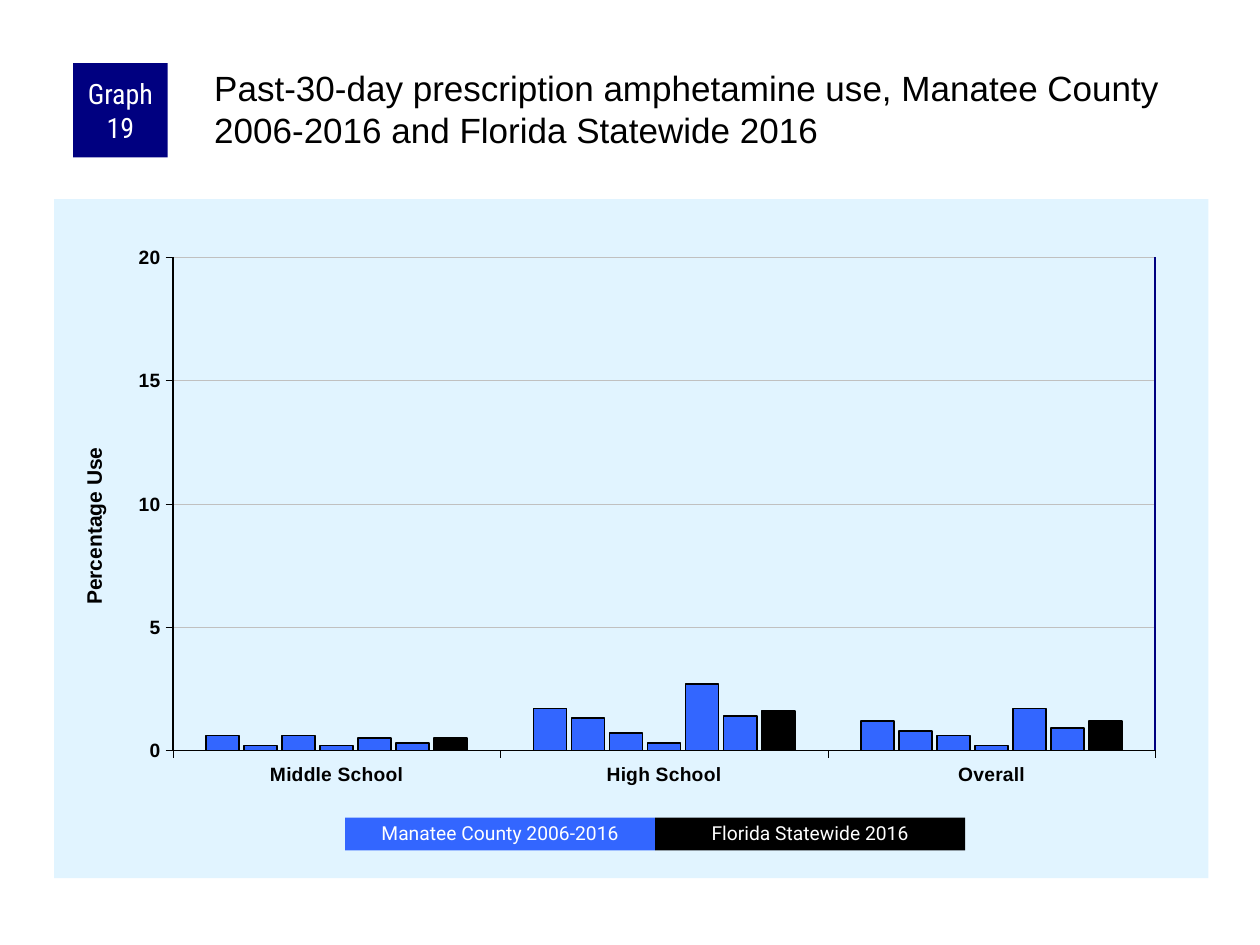
from lxml.etree import SubElement
from pptx import Presentation
from pptx.chart.data import CategoryChartData
from pptx.dml.color import RGBColor
from pptx.enum.chart import XL_CHART_TYPE, XL_TICK_MARK
from pptx.enum.shapes import MSO_CONNECTOR, MSO_SHAPE
from pptx.enum.text import MSO_ANCHOR, PP_ALIGN
from pptx.oxml import parse_xml
from pptx.oxml.ns import nsdecls, qn
from pptx.util import Inches, Pt

BLACK = RGBColor(0x00, 0x00, 0x00)
WHITE = RGBColor(0xFF, 0xFF, 0xFF)
NAVY = RGBColor(0x00, 0x00, 0x80)
BLUE = RGBColor(0x33, 0x66, 0xFF)
PALE = RGBColor(0xE1, 0xF4, 0xFF)
GRAY = RGBColor(0xC0, 0xC0, 0xC0)

TITLE = "Past-30-day prescription amphetamine use, Manatee County 2006-2016 and Florida Statewide 2016"
CATEGORIES = ["Middle School", "High School", "Overall"]
SERIES = [
    ((0.6, 1.7, 1.2), BLUE),
    ((0.2, 1.3, 0.8), BLUE),
    ((0.6, 0.7, 0.6), BLUE),
    ((0.2, 0.3, 0.2), BLUE),
    ((0.5, 2.7, 1.7), BLUE),
    ((0.3, 1.4, 0.9), BLUE),
    ((0.5, 1.6, 1.2), BLACK),
]
LEGEND = [("Manatee County 2006-2016", BLUE), ("Florida Statewide 2016", BLACK)]
LEGEND_LEFT, LEGEND_TOP, LEGEND_W, LEGEND_H = 2.74, 6.49, 2.46, 0.26
CHART_X, CHART_Y, CHART_W, CHART_H = 0.43, 1.58, 9.16, 5.39
PLOT = {"x": 0.103, "y": 0.086, "w": 0.851, "h": 0.726}


def set_font(font, name, size, color, bold=False):
    font.name, font.size, font.bold = name, Pt(size), bold
    font.color.rgb = color


def set_layout(parent, index, sizes, inner=False):
    for old in parent.findall(qn("c:layout")):
        parent.remove(old)
    layout = parse_xml(f"<c:layout {nsdecls('c')}/>")
    manual = SubElement(layout, qn("c:manualLayout"))
    if inner:
        SubElement(manual, qn("c:layoutTarget")).set("val", "inner")
    for key in "xy":
        SubElement(manual, qn(f"c:{key}Mode")).set("val", "edge")
    for key, value in sizes.items():
        SubElement(manual, qn(f"c:{key}")).set("val", str(value))
    parent.insert(index, layout)


def area_format(content):
    return parse_xml(f"<c:spPr {nsdecls('c', 'a')}>{content}</c:spPr>")


def solid(color):
    return f'<a:solidFill><a:srgbClr val="{color}"/></a:solidFill>'


def add_chart(s):
    data = CategoryChartData()
    data.categories = CATEGORIES
    for number, (values, _) in enumerate(SERIES, 1):
        data.add_series(f"Series {number}", values)
    chart = s.shapes.add_chart(
        XL_CHART_TYPE.COLUMN_CLUSTERED, Inches(CHART_X), Inches(CHART_Y),
        Inches(CHART_W), Inches(CHART_H), data).chart
    chart.has_legend = chart.has_title = False
    set_font(chart.font, "Arial", 8, BLACK)

    plot = chart.plots[0]
    plot.gap_width, plot.overlap, plot.vary_by_categories = 200, -15, False
    for series, (_, color) in zip(plot.series, SERIES):
        series.invert_if_negative = False
        series.format.fill.solid()
        series.format.fill.fore_color.rgb = color
        series.format.line.color.rgb = BLACK
        series.format.line.width = Pt(1)

    value_axis = chart.value_axis
    for axis in (chart.category_axis, value_axis):
        axis.major_tick_mark = XL_TICK_MARK.OUTSIDE
        axis.minor_tick_mark = XL_TICK_MARK.NONE
        axis.format.line.color.rgb = BLACK
        axis.format.line.width = Pt(0.25)
        set_font(axis.tick_labels.font, "Arial", 11, BLACK, True)
    value_axis.minimum_scale, value_axis.maximum_scale, value_axis.major_unit = 0, 20, 5
    value_axis.tick_labels.number_format = "0"
    value_axis.tick_labels.number_format_is_linked = False
    value_axis.has_major_gridlines = True
    value_axis.major_gridlines.format.line.color.rgb = GRAY
    value_axis.major_gridlines.format.line.width = Pt(0.25)
    tf = value_axis.axis_title.text_frame
    tf.text = "Percentage Use"
    set_font(tf.paragraphs[0].runs[0].font, "Arial", 12, BLACK, True)
    set_layout(value_axis.axis_title._element, 1, {"x": 0.02, "y": 0.36})

    space = chart._chartSpace
    space.find(qn("c:chart")).addnext(
        area_format(solid(PALE) + "<a:ln><a:noFill/></a:ln>"))
    area = space.find(".//" + qn("c:plotArea"))
    set_layout(area, 0, PLOT, inner=True)
    area.append(area_format(f'<a:noFill/><a:ln w="{Pt(1)}">{solid(BLACK)}</a:ln>'))


def add_plot_edge(s):
    x = CHART_X + CHART_W * (PLOT["x"] + PLOT["w"])
    top = CHART_Y + CHART_H * PLOT["y"]
    bottom = top + CHART_H * PLOT["h"]
    edge = s.shapes.add_connector(
        MSO_CONNECTOR.STRAIGHT, Inches(x), Inches(top), Inches(x), Inches(bottom))
    edge.line.color.rgb = NAVY
    edge.line.width = Pt(1)
    SubElement(edge._element.spPr, qn("a:effectLst"))


def add_box(s, box, text, fill, font_name, size, spacing=1.0, inset=0.1):
    sp = s.shapes.add_shape(MSO_SHAPE.RECTANGLE, *map(Inches, box))
    sp.shadow.inherit = False
    sp.fill.solid()
    sp.fill.fore_color.rgb = fill
    sp.line.fill.background()
    tf = sp.text_frame
    tf.text = text
    tf.word_wrap = True
    tf.vertical_anchor = MSO_ANCHOR.MIDDLE
    tf.margin_left = tf.margin_right = Inches(inset)
    tf.margin_top = tf.margin_bottom = 0
    p = tf.paragraphs[0]
    p.alignment, p.line_spacing = PP_ALIGN.CENTER, spacing
    set_font(p.runs[0].font, font_name, size, WHITE)


def add_title(s):
    sp = s.shapes.title
    sp.left, sp.top, sp.width, sp.height = map(Inches, (1.67, 0.5, 7.92, 0.83))
    tf = sp.text_frame
    tf.text = TITLE
    tf.word_wrap = True
    tf.vertical_anchor = MSO_ANCHOR.TOP
    tf.margin_left = tf.margin_top = Inches(0.03)
    tf.margin_right = tf.margin_bottom = 0
    p = tf.paragraphs[0]
    p.alignment = PP_ALIGN.LEFT
    set_font(p.runs[0].font, "Arial", 20, BLACK)


def main():
    """Build the slide with the amphetamine use chart."""
    prs = Presentation()
    prs.slide_width, prs.slide_height = Inches(10), Inches(7.5)
    s = prs.slides.add_slide(prs.slide_layouts[5])
    add_title(s)
    add_chart(s)
    add_plot_edge(s)
    add_box(s, (0.58, 0.5, 0.75, 0.75), "Graph 19", NAVY, "Roboto Condensed", 16, inset=0.05)
    for i, (text, color) in enumerate(LEGEND):
        box = (LEGEND_LEFT + i * LEGEND_W, LEGEND_TOP, LEGEND_W, LEGEND_H)
        add_box(s, box, text, color, "Roboto", 11, spacing=0.9)
    prs.save("out.pptx")


if __name__ == "__main__":
    main()
